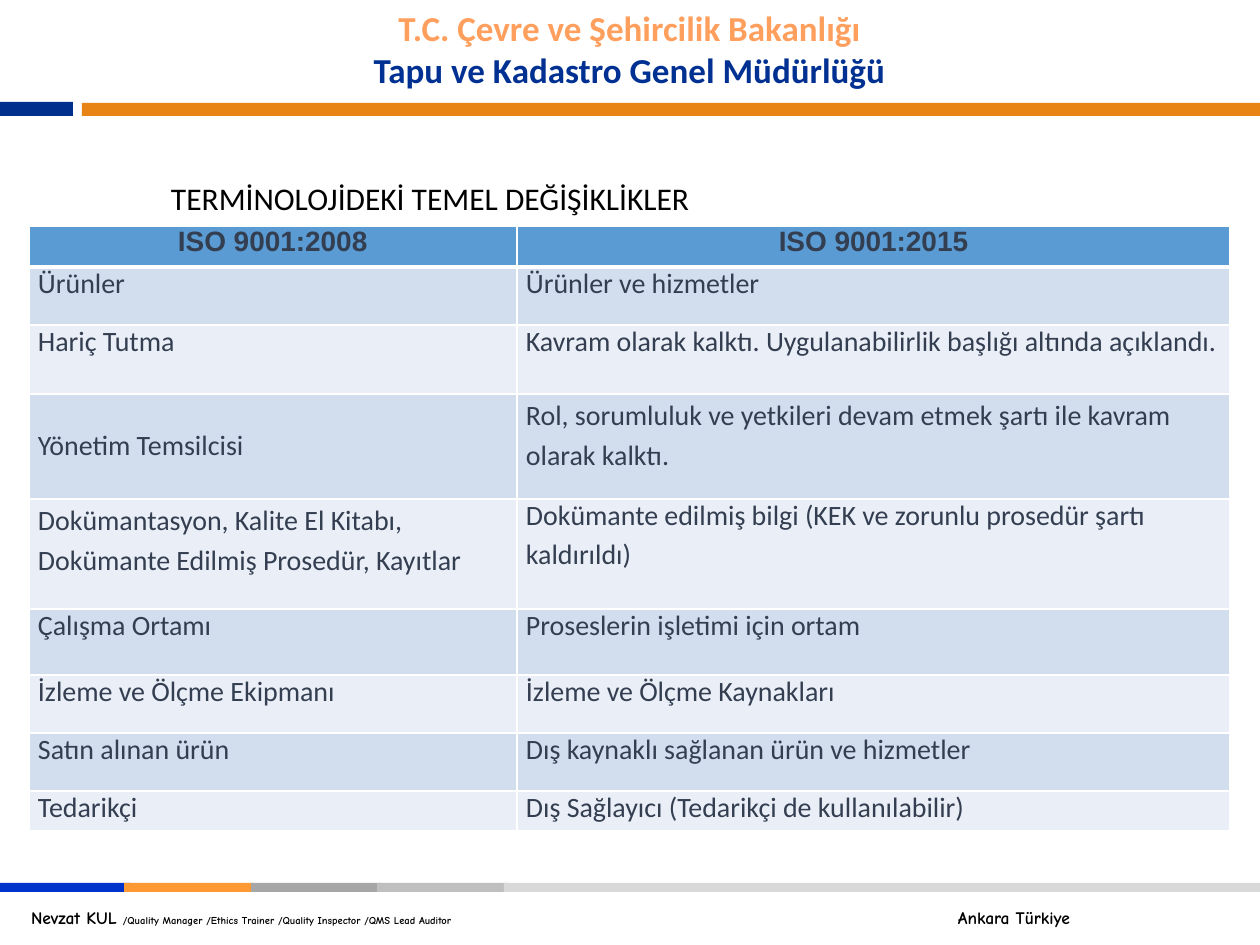
from lxml import etree
from pptx import Presentation
from pptx import util as u
from pptx.dml.color import RGBColor
from pptx.enum import shapes, text
from pptx.oxml import ns

SCALE = 914400 / 126
NAVY, BLACK, SLATE = "003192", "000000", "333E50"
BARS = [
    (0, 102, 73, 14, "002F8E"),
    (82, 103, 1178, 13, "E88416"),
    (0, 883, 130, 9, "0033CC"),
    (124, 883, 130, 9, "FF9933"),
    (251, 883, 130, 9, "A6A6A6"),
    (377, 883, 130, 9, "BFBFBF"),
    (504, 883, 756, 9, "D9D9D9"),
]
COLS = [488, 713]
HEIGHTS = [41, 58, 69, 105, 110, 66, 58, 58, 40]
ROWS = [
    ("ISO 9001:2008", "ISO 9001:2015"),
    ("Ürünler", "Ürünler ve hizmetler"),
    ("Hariç Tutma",
     "Kavram olarak kalktı. Uygulanabilirlik başlığı altında açıklandı."),
    ("Yönetim Temsilcisi",
     "Rol, sorumluluk ve yetkileri devam etmek şartı ile kavram olarak kalktı."),
    ("Dokümantasyon, Kalite El Kitabı, Dokümante Edilmiş Prosedür, Kayıtlar",
     "Dokümante edilmiş bilgi (KEK ve zorunlu prosedür şartı\nkaldırıldı)"),
    ("Çalışma Ortamı", "Proseslerin işletimi için ortam"),
    ("İzleme ve Ölçme Ekipmanı", "İzleme ve Ölçme Kaynakları"),
    ("Satın alınan ürün", "Dış kaynaklı sağlanan ürün ve hizmetler"),
    ("Tedarikçi", "Dış Sağlayıcı (Tedarikçi de kullanılabilir)"),
]


def px(n):
    return u.Emu(round(n * SCALE))


def paint(fill, color):
    fill.solid()
    fill.fore_color.rgb = RGBColor.from_string(color)


def style(font, size, color, bold=False, face="Calibri"):
    font.name, font.size, font.bold = face, u.Pt(size), bold
    font.color.rgb = RGBColor.from_string(color)


def add_bar(slide, x, y, w, h, color):
    bar = slide.shapes.add_shape(
        shapes.MSO_SHAPE.RECTANGLE, px(x), px(y), px(w), px(h))
    bar.shadow.inherit = False
    paint(bar.fill, color)
    bar.line.fill.background()


def add_box(slide, x, y, w, h, top=6):
    box = slide.shapes.add_textbox(px(x), px(y), px(w), px(h))
    frame = box.text_frame
    frame.word_wrap = True
    frame.margin_left = frame.margin_right = frame.margin_bottom = 0
    frame.margin_top = px(top)
    return frame


def add_head(slide):
    frame = add_box(slide, 251, 0, 757, 97)
    frame.text = "T.C. Çevre ve Şehircilik Bakanlığı\nTapu ve Kadastro Genel Müdürlüğü"
    for para, color in zip(frame.paragraphs, ("FF9F5D", NAVY)):
        para.alignment = text.PP_ALIGN.CENTER
        style(para.runs[0].font, 20, color, True)


def add_title(slide):
    frame = add_box(slide, 171, 179, 978, 67, 0)
    frame.text = "TERMİNOLOJİDEKİ TEMEL DEĞİŞİKLİKLER"
    style(frame.paragraphs[0].runs[0].font, 18, BLACK)


def add_foot(slide):
    left = 31
    para = add_box(slide, left, 901, 1229, 34).paragraphs[0]
    tabs = etree.SubElement(para._p.get_or_add_pPr(), ns.qn("a:tabLst"))
    etree.SubElement(tabs, ns.qn("a:tab"), pos=str(px(958 - left)), algn="l")
    parts = [
        ("Nevzat KUL ", 10),
        ("/Quality Manager /Ethics Trainer /Quality Inspector /QMS Lead Auditor", 6),
        ("\tAnkara Türkiye", 10),
    ]
    for words, size in parts:
        run = para.add_run()
        run.text = words
        style(run.font, size, BLACK, True, "Comic Neue")


def add_edge(cell, side, width):
    line = etree.SubElement(
        cell._tc.get_or_add_tcPr(), ns.qn("a:ln" + side), w=str(u.Pt(width)))
    fill = etree.SubElement(line, ns.qn("a:solidFill"))
    etree.SubElement(fill, ns.qn("a:srgbClr"), val="FFFFFF")


def fill_cell(cell, words, row):
    for side in "LRTB":
        thick = (row, side) in ((0, "B"), (1, "T"))
        add_edge(cell, side, 3 if thick else 1)
    head = row == 0
    paint(cell.fill, "5B9BD4" if head else "D2DEEE" if row % 2 else "EAEEF7")
    cell.margin_right = cell.margin_top = cell.margin_bottom = 0
    cell.margin_left = px(9)
    cell.text_frame.text = words
    for para in cell.text_frame.paragraphs:
        style(para.runs[0].font, 16, SLATE, head, "Arial" if head else "Calibri")


def add_grid(slide):
    grid = slide.shapes.add_table(
        len(ROWS), len(COLS), px(29), px(226),
        px(sum(COLS)), px(sum(HEIGHTS))).table
    for col, width in zip(grid.columns, COLS):
        col.width = px(width)
    for r, (height, words) in enumerate(zip(HEIGHTS, ROWS)):
        grid.rows[r].height = px(height)
        for c, word in enumerate(words):
            fill_cell(grid.cell(r, c), word, r)
    grid.cell(0, 0).margin_left = px(149)
    grid.cell(0, 1).margin_left = 0
    grid.cell(0, 1).text_frame.paragraphs[0].alignment = text.PP_ALIGN.CENTER
    grid.cell(3, 0).vertical_anchor = text.MSO_ANCHOR.MIDDLE
    for spot in ((3, 1), (4, 0)):
        grid.cell(*spot).text_frame.paragraphs[0].line_spacing = 1.15
    grid.cell(4, 1).text_frame.paragraphs[1].space_before = u.Pt(2.9)


def main():
    deck = Presentation()
    deck.slide_width, deck.slide_height = px(1260), px(945)
    slide = deck.slides.add_slide(deck.slide_layouts[6])
    for bar in BARS:
        add_bar(slide, *bar)
    add_head(slide)
    add_foot(slide)
    add_title(slide)
    add_grid(slide)
    deck.save("out.pptx")


if __name__ == "__main__":
    main()
